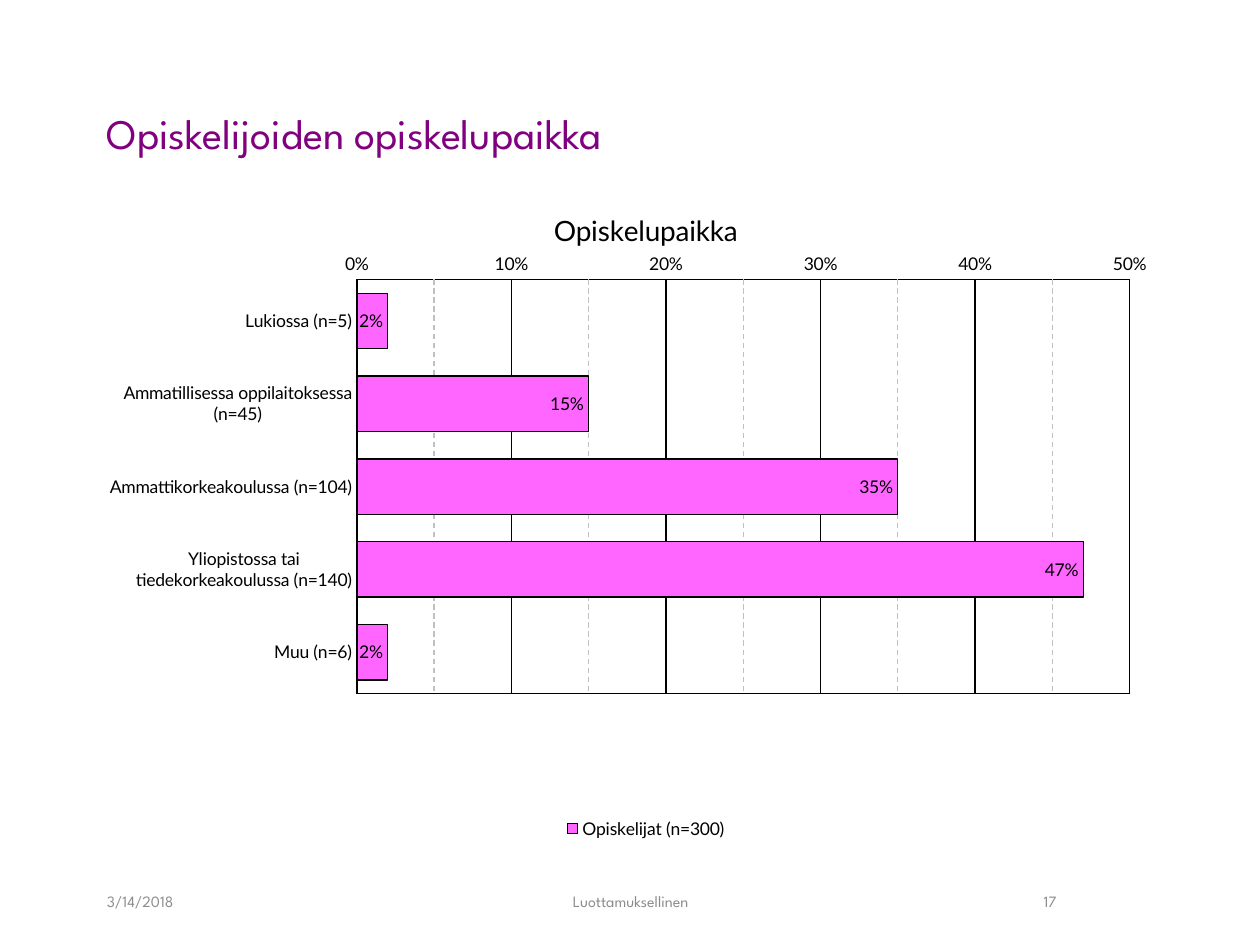
import pptx
import pptx.chart.data
import pptx.dml.color
import pptx.enum.chart
import pptx.enum.text
import pptx.oxml
import pptx.oxml.ns
import pptx.util

RGBColor = pptx.dml.color.RGBColor
PURPLE = RGBColor(0x80, 0x00, 0x80)
GRAY = RGBColor(0x8C, 0x8C, 0x8C)
GRID_GRAY = RGBColor(0xC0, 0xC0, 0xC0)
PINK = RGBColor(0xFF, 0x66, 0xFF)
BLACK = RGBColor(0, 0, 0)
align = pptx.enum.text.PP_ALIGN
anchors = pptx.enum.text.MSO_ANCHOR
Inches, Pt = pptx.util.Inches, pptx.util.Pt

deck = pptx.Presentation()
deck.slide_width, deck.slide_height = Inches(10), Inches(7.5)
page = deck.slides.add_slide(deck.slide_layouts[6])

LEFT, WIDTH = 0.75, 8.75
FOOTER_TOP, FOOTER_HEIGHT = 6.95, 0.4


def add_text(text, left, top, width, height, size=9, color=GRAY,
             alignment=align.LEFT, anchor=anchors.MIDDLE, line_spacing=1.0):
    box = page.shapes.add_textbox(Inches(left), Inches(top), Inches(width), Inches(height))
    frame = box.text_frame
    frame.word_wrap = True
    frame.vertical_anchor = anchor
    para = frame.paragraphs[0]
    para.alignment = alignment
    para.line_spacing = line_spacing
    span = para.add_run()
    span.text = text
    span.font.name = "League Spartan"
    span.font.size = Pt(size)
    span.font.color.rgb = color


def style_line(line):
    line.color.rgb = BLACK
    line.width = Pt(0.75)


add_text("Opiskelijoiden opiskelupaikka", LEFT, 0.23, WIDTH, 1.08, size=24,
         color=PURPLE, anchor=anchors.BOTTOM, line_spacing=0.9)
for text, left, width, alignment in [
    ("3/14/2018", LEFT, 2.09, align.LEFT),
    ("Luottamuksellinen", 3.42, 3.17, align.CENTER),
    ("17", 7.17, 2.33, align.CENTER),
]:
    add_text(text, left, FOOTER_TOP, width, FOOTER_HEIGHT, alignment=alignment)

# Bar chart
shares = {
    "Lukiossa (n=5)": 0.02,
    "Ammatillisessa oppilaitoksessa (n=45)": 0.15,
    "Ammattikorkeakoulussa (n=104)": 0.35,
    "Yliopistossa tai tiedekorkeakoulussa (n=140)": 0.47,
    "Muu (n=6)": 0.02,
}
data = pptx.chart.data.CategoryChartData(number_format="0%")
data.categories = list(shares)
data.add_series("Opiskelijat (n=300)", list(shares.values()))
chart = page.shapes.add_chart(
    pptx.enum.chart.XL_CHART_TYPE.BAR_CLUSTERED,
    Inches(LEFT), Inches(1.47), Inches(WIDTH), Inches(5.23), data).chart
chart.font.name = "Lato"
chart.font.size = Pt(10)
chart.font.color.rgb = BLACK

chart.has_title = True
title = chart.chart_title.text_frame
title.text = "Opiskelupaikka"
title_font = title.paragraphs[0].runs[0].font
title_font.name = "Lato"
title_font.size = Pt(16)
title_font.bold = False
title_font.color.rgb = BLACK
chart.has_legend = True
chart.legend.position = pptx.enum.chart.XL_LEGEND_POSITION.BOTTOM
chart.legend.include_in_layout = False

categories, values = chart.category_axis, chart.value_axis
for axis in (categories, values):
    axis.major_tick_mark = axis.minor_tick_mark = pptx.enum.chart.XL_TICK_MARK.NONE
categories.reverse_order = True
categories.crosses = pptx.enum.chart.XL_AXIS_CROSSES.MAXIMUM
style_line(categories.format.line)
values.minimum_scale, values.maximum_scale = 0, 0.5
values.major_unit, values.minor_unit = 0.1, 0.05
values.tick_labels.number_format = "0%"
values.tick_labels.number_format_is_linked = False
values.format.line.fill.background()
values.has_major_gridlines = values.has_minor_gridlines = True
style_line(values.major_gridlines.format.line)

plot = chart.plots[0]
plot.gap_width = 50
plot.vary_by_categories = False
bars = plot.series[0]
bars.format.fill.solid()
bars.format.fill.fore_color.rgb = PINK
style_line(bars.format.line)
labels = bars.data_labels
labels.show_value = True
labels.position = pptx.enum.chart.XL_LABEL_POSITION.INSIDE_END
labels.number_format = "0%"
labels.number_format_is_linked = False

# Fixed inner plot area with a black frame, and dashed minor gridlines
qn = pptx.oxml.ns.qn
namespaces = pptx.oxml.ns.nsdecls("c", "a")
plot_area = chart._chartSpace.find(".//" + qn("c:plotArea"))
for old_layout in plot_area.findall(qn("c:layout")):
    plot_area.remove(old_layout)
shares_of_chart = {"x": 0.238, "y": 0.143, "w": 0.701, "h": 0.629}
sizes = "".join(f'<c:{key} val="{share}"/>' for key, share in shares_of_chart.items())
plot_area.insert(0, pptx.oxml.parse_xml(
    f'<c:layout {namespaces}><c:manualLayout><c:layoutTarget val="inner"/>'
    f'<c:xMode val="edge"/><c:yMode val="edge"/>{sizes}</c:manualLayout></c:layout>'))
minor_gridlines = plot_area.find(".//" + qn("c:minorGridlines"))
for parent, color, dash in [(plot_area, BLACK, "solid"), (minor_gridlines, GRID_GRAY, "dash")]:
    parent.append(pptx.oxml.parse_xml(
        f'<c:spPr {namespaces}><a:noFill/><a:ln w="{Pt(0.75)}"><a:solidFill>'
        f'<a:srgbClr val="{color}"/></a:solidFill><a:prstDash val="{dash}"/></a:ln></c:spPr>'))

deck.save("out.pptx")
